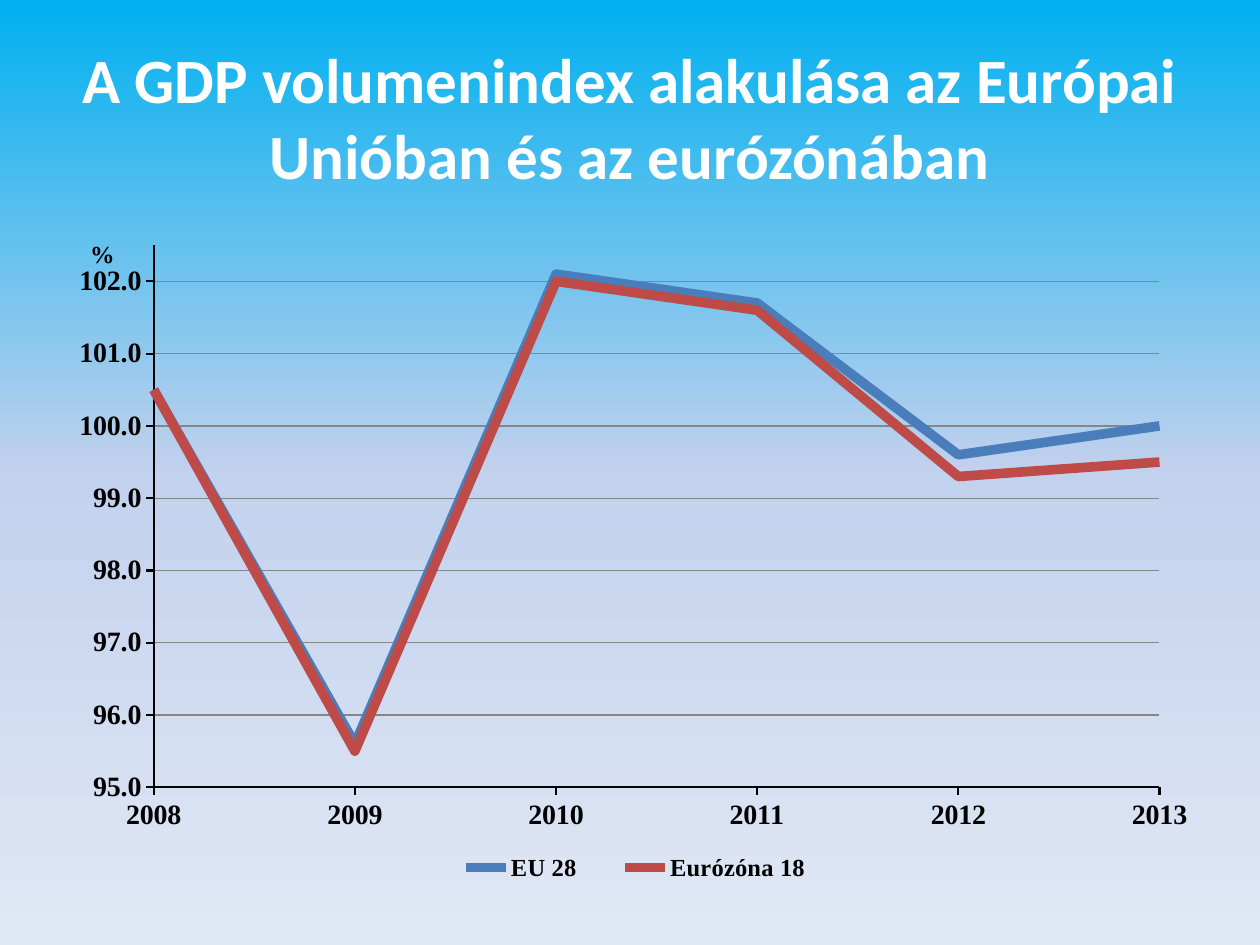
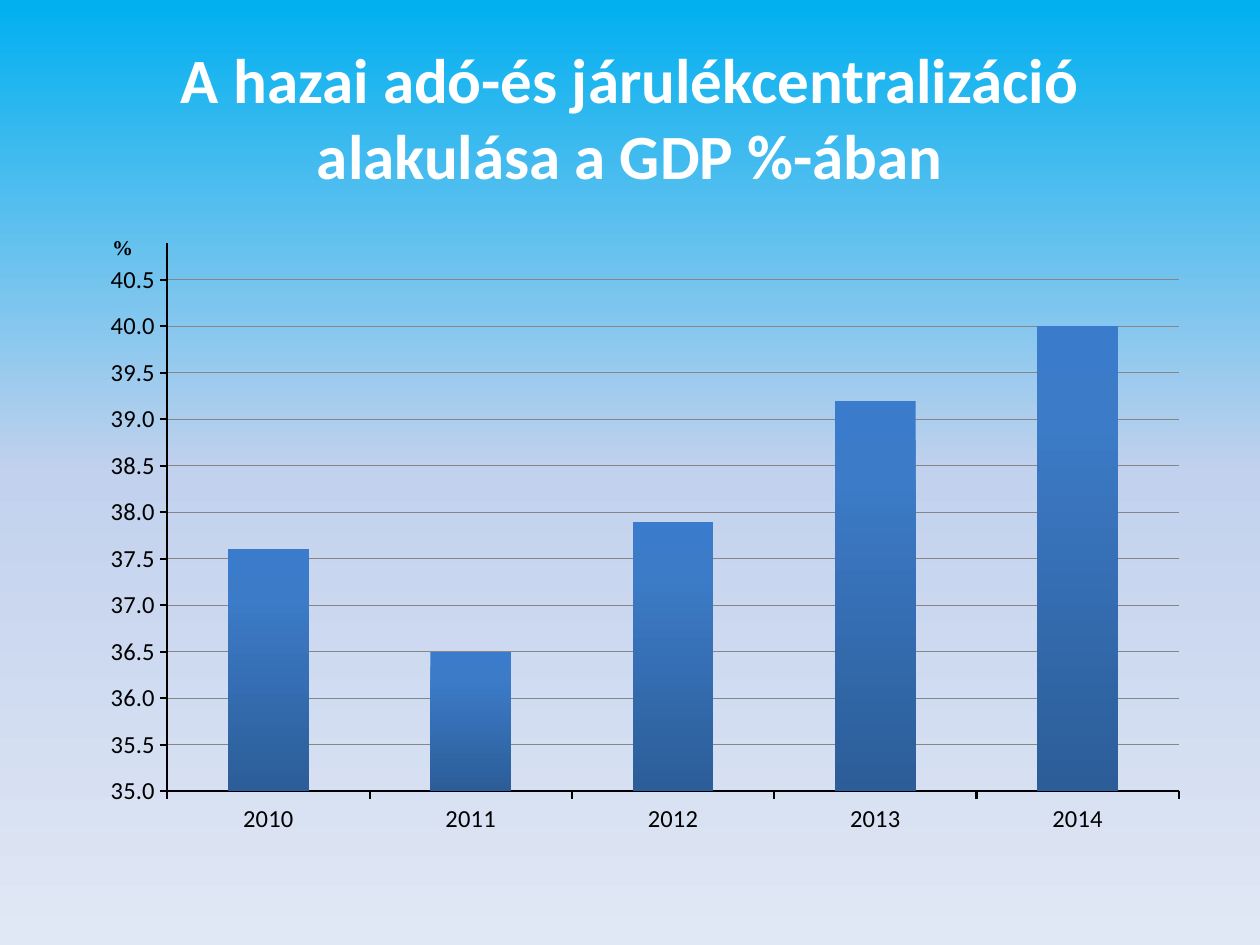
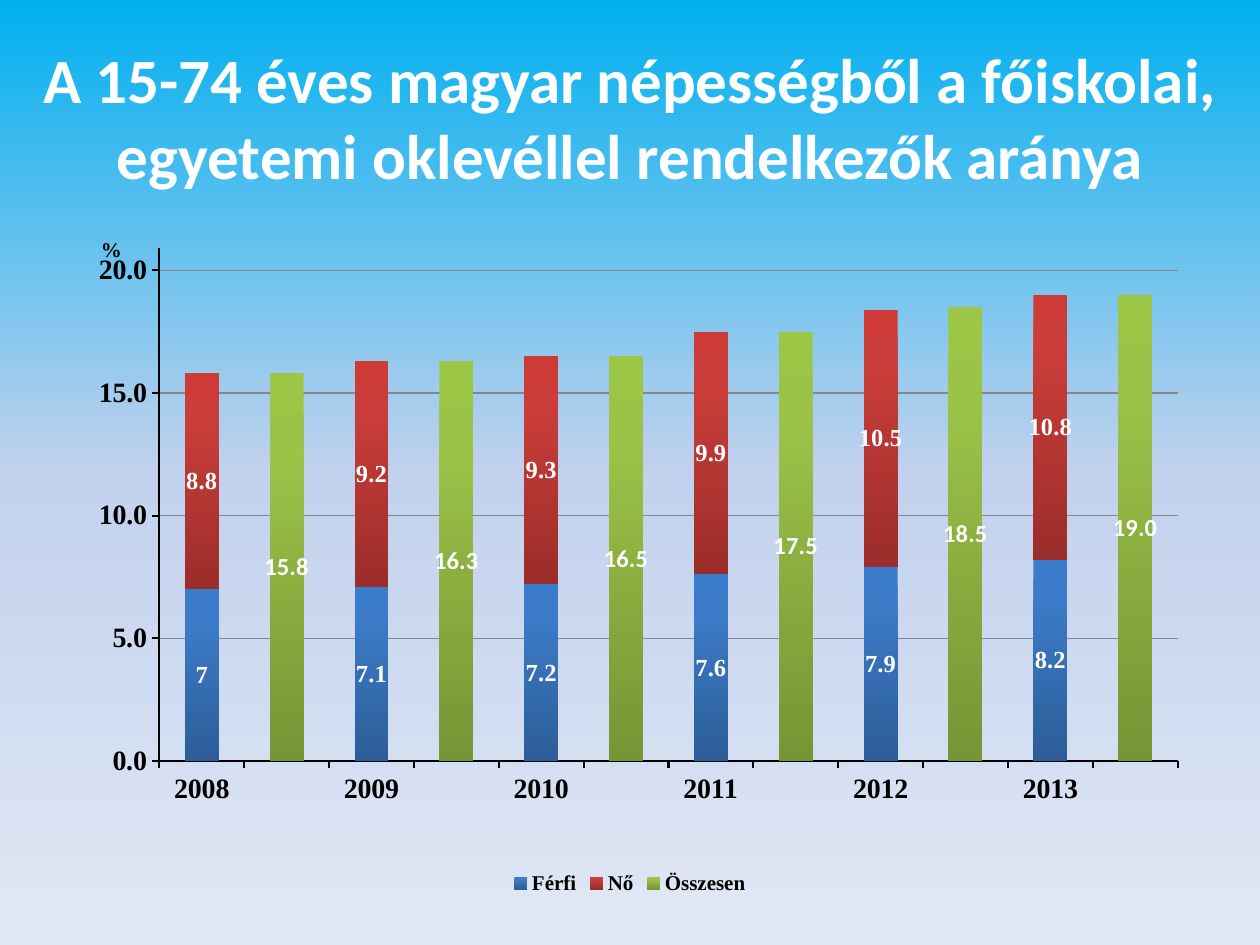
"""Build three slides on GDP, tax ratio and graduates, each with a title and a chart."""
import pptx
import pptx.chart.data
import pptx.dml.color
import pptx.enum.chart
import pptx.enum.text
import pptx.oxml
import pptx.oxml.ns
import pptx.util

Pt = pptx.util.Pt
RGB = pptx.dml.color.RGBColor
Kind = pptx.enum.chart.XL_CHART_TYPE
Tick = pptx.enum.chart.XL_TICK_MARK
qn = pptx.oxml.ns.qn

WHITE = RGB(0xFF, 0xFF, 0xFF)
BLACK = RGB(0, 0, 0)
GRID = RGB(0x86, 0x86, 0x86)
BLUE = RGB(0x4A, 0x7E, 0xBB)
RED = RGB(0xBE, 0x4B, 0x48)
SKY = [(0, RGB(0x00, 0xB0, 0xF0)), (50, RGB(0xC2, 0xD1, 0xED)), (100, RGB(0xE1, 0xE8, 0xF5))]
BLUES = [(0, RGB(0x3A, 0x7C, 0xCB)), (20, RGB(0x3C, 0x7B, 0xC7)), (100, RGB(0x2C, 0x5D, 0x98))]
REDS = [(0, RGB(0xCE, 0x3B, 0x37)), (20, RGB(0xCB, 0x3D, 0x3A)), (100, RGB(0x9B, 0x2D, 0x2A))]
GREENS = [(0, RGB(0x9C, 0xC7, 0x46)), (20, RGB(0x9B, 0xC3, 0x48)), (100, RGB(0x76, 0x95, 0x35))]
SANS, SERIF = "Calibri", "Times New Roman"


def spread(first, vals):
    """Place values on every second category, starting at first."""
    out = [None] * (2 * len(vals))
    out[first::2] = vals
    return out


SLIDES = [
    dict(
        title="A GDP volumenindex alakulása az Európai Unióban és az eurózónában",
        head=(36, 648), box=(36, 126, 648, 382.5), kind=Kind.LINE,
        cats=["2008", "2009", "2010", "2011", "2012", "2013"],
        series=[("EU 28", [100.5, 95.6, 102.1, 101.7, 99.6, 100], BLUE, None),
                ("Eurózóna 18", [100.5, 95.5, 102, 101.6, 99.3, 99.5], RED, None)],
        scale=(95, 102.5, 1), font=(SERIF, 16, True), unit=(14, 0.02, 0.02),
        plot=(0.08, 0.037, 0.887, 0.81), legend=14, key=(0.32, 0.935, 0.37, 0.064)),
    dict(
        title="A hazai adó-és járulékcentralizáció alakulása a GDP %-ában",
        head=(36, 648), box=(36, 111.6, 648, 371), kind=Kind.COLUMN_CLUSTERED,
        cats=["2010", "2011", "2012", "2013", "2014"],
        series=[("Series 1", [37.6, 36.5, 37.9, 39.2, 40], BLUES, None)],
        scale=(35, 40.9, 0.5), font=(SANS, 14, False), unit=(12, 0.04, 0.055),
        plot=(0.092, 0.073, 0.892, 0.845), legend=None, key=None),
    dict(
        title="A 15-74 éves magyar népességből a főiskolai, egyetemi oklevéllel rendelkezők aránya",
        head=(0, 720), box=(36, 126, 648, 388), kind=Kind.COLUMN_STACKED,
        cats=["2008", "", "2009", "", "2010", "", "2011", "", "2012", "", "2013", ""],
        series=[("Férfi", spread(0, [7, 7.1, 7.2, 7.6, 7.9, 8.2]), BLUES, (SERIF, "General")),
                ("Nő", spread(0, [8.8, 9.2, 9.3, 9.9, 10.5, 10.8]), REDS, (SERIF, "General")),
                ("Összesen", spread(1, [15.8, 16.3, 16.5, 17.5, 18.5, 19]), GREENS, (SANS, "0.0"))],
        scale=(0, 20.9, 5), font=(SERIF, 16, True), unit=(12, 0.03, 0.018),
        plot=(0.085, 0.041, 0.898, 0.755), legend=12, key=None),
]


def style(font, face, size, bold, color=BLACK):
    """Set the look of a font."""
    font.name, font.size, font.bold = face, Pt(size), bold
    font.color.rgb = color


def blend(fill, root, stops):
    """Fill from top to bottom through the given stops."""
    fill.gradient()
    fill.gradient_angle = 270
    area = root.find(".//" + qn("a:gsLst"))
    for old in list(area):
        area.remove(old)
    for pos, color in stops:
        stop = pptx.oxml.ns.qn("a:gs")
        node = area.makeelement(stop, {"pos": str(pos * 1000)})
        node.append(node.makeelement(qn("a:srgbClr"), {"val": str(color)}))
        area.append(node)


def place(part, index, sizes, inner=False):
    """Give a chart part a fixed place, in fractions of the chart."""
    for old in part.findall(qn("c:layout")):
        part.remove(old)
    layout = part.makeelement(qn("c:layout"), {})
    manual = layout.makeelement(qn("c:manualLayout"), {})
    pairs = [("layoutTarget", "inner")] if inner else []
    pairs += [("xMode", "edge"), ("yMode", "edge")]
    pairs += zip("xywh", map(str, sizes))
    for name, val in pairs:
        manual.append(manual.makeelement(qn("c:" + name), {"val": val}))
    layout.append(manual)
    part.insert(index, layout)


def set_axes(chart, item):
    """Format both axes, the grid and the unit."""
    root = chart.element
    for axis in (chart.category_axis, chart.value_axis):
        style(axis.tick_labels.font, *item["font"])
        axis.format.line.color.rgb = BLACK
        axis.format.line.width = Pt(1.25)
        axis.major_tick_mark, axis.minor_tick_mark = Tick.OUTSIDE, Tick.NONE
    axis = chart.value_axis
    axis.minimum_scale, axis.maximum_scale, axis.major_unit = item["scale"]
    axis.tick_labels.number_format = "0.0"
    axis.tick_labels.number_format_is_linked = False
    axis.has_major_gridlines = True
    axis.major_gridlines.format.line.color.rgb = GRID
    axis.major_gridlines.format.line.width = Pt(0.75)
    size, left, top = item["unit"]
    text = axis.axis_title.text_frame
    text.text = "%"
    style(text.paragraphs[0].font, SERIF, size, True)
    title = root.xpath(".//c:valAx/c:title")[0]
    body = title.find(".//" + qn("a:bodyPr"))
    body.set("rot", "0")
    body.set("vert", "horz")
    place(title, 1, (left, top))
    if item["kind"] == Kind.LINE:
        for old in root.xpath(".//c:valAx/c:crossBetween"):
            old.getparent().remove(old)
        cross = root.xpath(".//c:valAx/c:crosses")[0]
        cross.addnext(cross.makeelement(qn("c:crossBetween"), {"val": "midCat"}))


def set_series(chart, item):
    """Colour the series and label them."""
    for ser, (_, _, paint, label) in zip(chart.plots[0].series, item["series"]):
        if item["kind"] == Kind.LINE:
            ser.smooth = False
            ser.marker.style = pptx.enum.chart.XL_MARKER_STYLE.NONE
            ser.format.line.color.rgb = paint
            ser.format.line.width = Pt(5.5)
        else:
            blend(ser.format.fill, ser._element, paint)
        if label:
            face, form = label
            tags = ser.data_labels
            tags.show_value = True
            tags.number_format, tags.number_format_is_linked = form, False
            tags.position = pptx.enum.chart.XL_LABEL_POSITION.CENTER
            style(tags.font, face, 14, True, WHITE)


def add_chart(slide, item):
    """Add the chart of one slide."""
    data = pptx.chart.data.CategoryChartData()
    data.categories = item["cats"]
    for name, vals, _, _ in item["series"]:
        data.add_series(name, vals)
    chart = slide.shapes.add_chart(item["kind"], *map(Pt, item["box"]), data).chart
    style(chart.font, SANS, 18, False)
    chart.has_title = False
    plot = chart.plots[0]
    plot.vary_by_categories = False
    if item["kind"] != Kind.LINE:
        plot.gap_width = 150
        plot.overlap = 100 if item["kind"] == Kind.COLUMN_STACKED else 0
    set_axes(chart, item)
    set_series(chart, item)
    place(chart.element.find(".//" + qn("c:plotArea")), 0, item["plot"], True)
    chart.has_legend = bool(item["legend"])
    if item["legend"]:
        chart.legend.position = pptx.enum.chart.XL_LEGEND_POSITION.BOTTOM
        chart.legend.include_in_layout = False
        style(chart.legend.font, SERIF, item["legend"], True)
        if item["key"]:
            place(chart.element.find(".//" + qn("c:legend")), 1, item["key"])


def add_title(slide, item):
    """Place and format the title."""
    title = slide.shapes.title
    left, width = item["head"]
    title.left, title.top, title.width, title.height = map(Pt, (left, 21.6, width, 90))
    frame = title.text_frame
    frame.text = item["title"]
    frame.vertical_anchor = pptx.enum.text.MSO_ANCHOR.MIDDLE
    para = frame.paragraphs[0]
    para.alignment = pptx.enum.text.PP_ALIGN.CENTER
    style(para.font, SANS, 36, True, WHITE)


def main():
    """Build and save the deck."""
    deck = pptx.Presentation()
    deck.slide_width, deck.slide_height = Pt(720), Pt(540)
    master = deck.slide_master
    blend(master.background.fill, master.element, SKY)
    for item in SLIDES:
        slide = deck.slides.add_slide(deck.slide_layouts[5])
        add_title(slide, item)
        add_chart(slide, item)
    deck.save("out.pptx")


if __name__ == "__main__":
    main()
